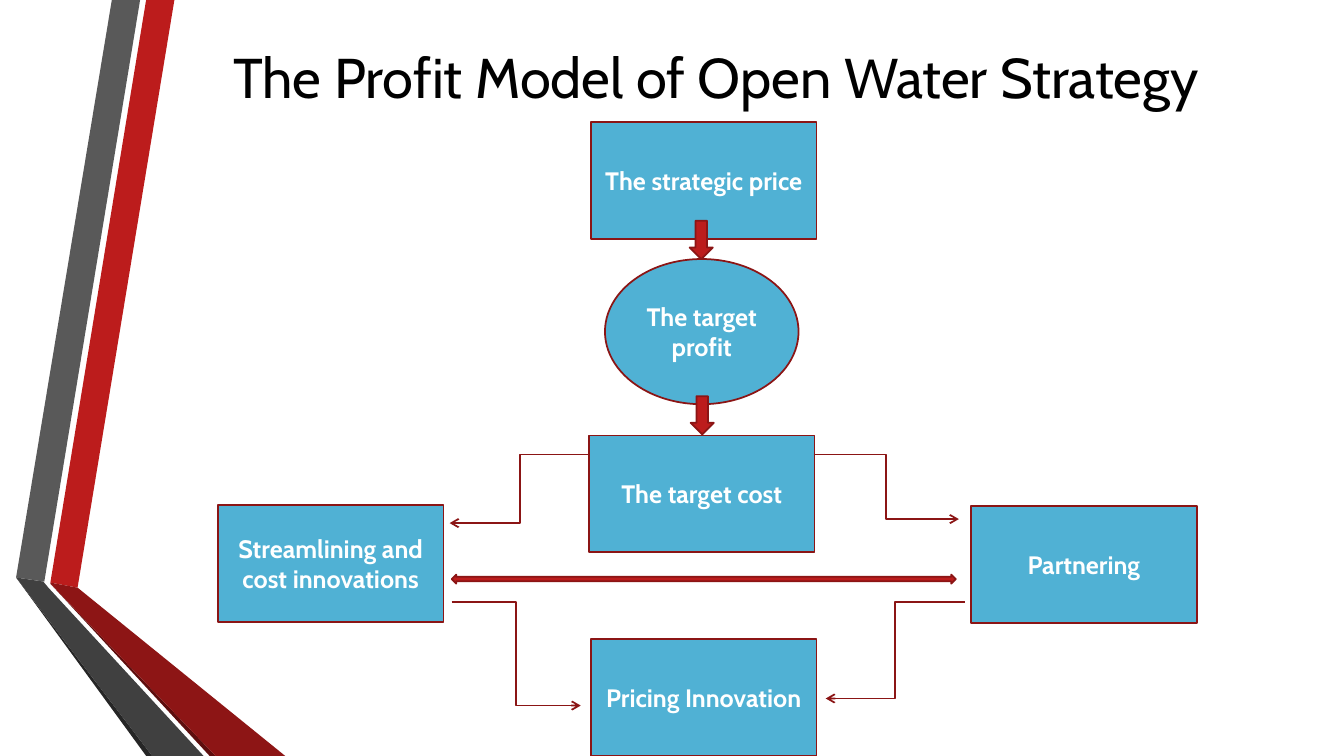
from lxml import etree
from pptx import Presentation
from pptx.dml.color import RGBColor
from pptx.enum.shapes import MSO_CONNECTOR, MSO_SHAPE as Preset
from pptx.enum.text import MSO_ANCHOR, PP_ALIGN
from pptx.oxml.ns import qn
from pptx.util import Inches, Pt

BLUE, RED, DARK_RED = "50B1D4", "BC1C1C", "8B1515"
STEP_SIZE = (2.24, 1.16)
ARROW_SIZE = (0.23, 0.38)

RIBBONS = [
    (RED, [(0.5, 5.78), (0.77, 5.83), (1.73, 0), (1.45, 0)]),
    ("595959", [(1.39, 0), (1.11, 0), (0.16, 5.73), (0.44, 5.77)]),
    ("262626", [(0.16, 5.73), (1.45, 7.5), (1.51, 7.5)]),
    ("5E0E0E", [(0.5, 5.79), (2.08, 7.5), (2.14, 7.5)]),
    ("8D1515", [(0.5, 5.79), (2.14, 7.5), (2.83, 7.5), (0.77, 5.83), (0.5, 5.78)]),
    ("404040", [(2.02, 7.5), (0.48, 5.83), (0.43, 5.77), (0.16, 5.73), (1.51, 7.5)]),
]
STEPS = [
    ("The strategic price", 5.86, 1.21),
    ("Streamlining and cost innovations", 2.16, 5.01),
    ("The target cost", 5.84, 4.32),
    ("Partnering", 9.63, 5.02),
    ("Pricing Innovation", 5.86, 6.34),
]
BLOCK_ARROWS = [
    (Preset.DOWN_ARROW, (6.84, 2.19), ARROW_SIZE),
    (Preset.DOWN_ARROW, (6.85, 3.93), ARROW_SIZE),
    (Preset.LEFT_RIGHT_ARROW, (4.48, 5.7), (5, 0.09)),
]
FLOWS = [
    ((8.07, 4.51), (9.51, 5.15)),
    ((5.85, 4.51), (4.46, 5.19)),
    ((4.48, 5.97), (5.76, 7)),
    ((9.57, 5.97), (8.19, 6.93)),
]


def rgb(value):
    """Turn a hex string into a colour."""
    return RGBColor.from_string(value)


def lengths(*values):
    """Turn numbers of inches into lengths."""
    return [Inches(value) for value in values]


def write(shape, text, size=18, color="FFFFFF", bold=True):
    """Put centred, wrapped text in a shape."""
    frame = shape.text_frame
    frame.word_wrap = True
    frame.vertical_anchor = MSO_ANCHOR.MIDDLE
    paragraph = frame.paragraphs[0]
    paragraph.alignment = PP_ALIGN.CENTER
    run = paragraph.add_run()
    run.text = text
    run.font.name = "Cabin"
    run.font.size = Pt(size)
    run.font.bold = bold
    run.font.color.rgb = rgb(color)


def paint(shape, fill, line=None):
    """Set a flat fill and an optional outline."""
    shape.shadow.inherit = False
    shape.fill.solid()
    shape.fill.fore_color.rgb = rgb(fill)
    if line:
        shape.line.color.rgb = rgb(line)
        shape.line.width = Pt(1.25)
    else:
        shape.line.fill.background()


def add_ribbon(slide, fill, points):
    """Draw one closed piece of the folded ribbons."""
    start, *rest = [lengths(*point) for point in points]
    builder = slide.shapes.build_freeform(*start)
    builder.add_line_segments(rest, close=True)
    paint(builder.convert_to_shape(), fill)


def add_block(slide, preset, place, size, fill, text=None):
    """Draw an outlined preset shape with optional text."""
    block = slide.shapes.add_shape(preset, *lengths(*place, *size))
    paint(block, fill, DARK_RED)
    if text:
        write(block, text)


def add_flow(slide, start, end):
    """Draw an elbow connector with an open arrowhead at its end."""
    flow = slide.shapes.add_connector(MSO_CONNECTOR.ELBOW, *lengths(*start, *end))
    flow.line.color.rgb = rgb(DARK_RED)
    flow.line.width = Pt(1.25)
    etree.SubElement(flow.line._get_or_add_ln(), qn("a:tailEnd"), type="arrow")
    etree.SubElement(flow._element.spPr, qn("a:effectLst"))


def main():
    """Build the profit model slide."""
    deck = Presentation()
    deck.slide_width, deck.slide_height = lengths(13.33, 7.5)
    slide = deck.slides.add_slide(deck.slide_layouts[6])

    for fill, points in RIBBONS:
        add_ribbon(slide, fill, points)

    title = slide.shapes.add_textbox(*lengths(1.62, 0.18, 10.96, 1.16))
    write(title, "The Profit Model of Open Water Strategy", size=40, color="000000", bold=False)

    add_block(slide, Preset.OVAL, (6, 2.57), (1.92, 1.44), BLUE, "The target profit")
    for text, left, top in STEPS:
        add_block(slide, Preset.RECTANGLE, (left, top), STEP_SIZE, BLUE, text)
    for preset, place, size in BLOCK_ARROWS:
        add_block(slide, preset, place, size, RED)
    for start, end in FLOWS:
        add_flow(slide, start, end)

    deck.save("out.pptx")


if __name__ == "__main__":
    main()
